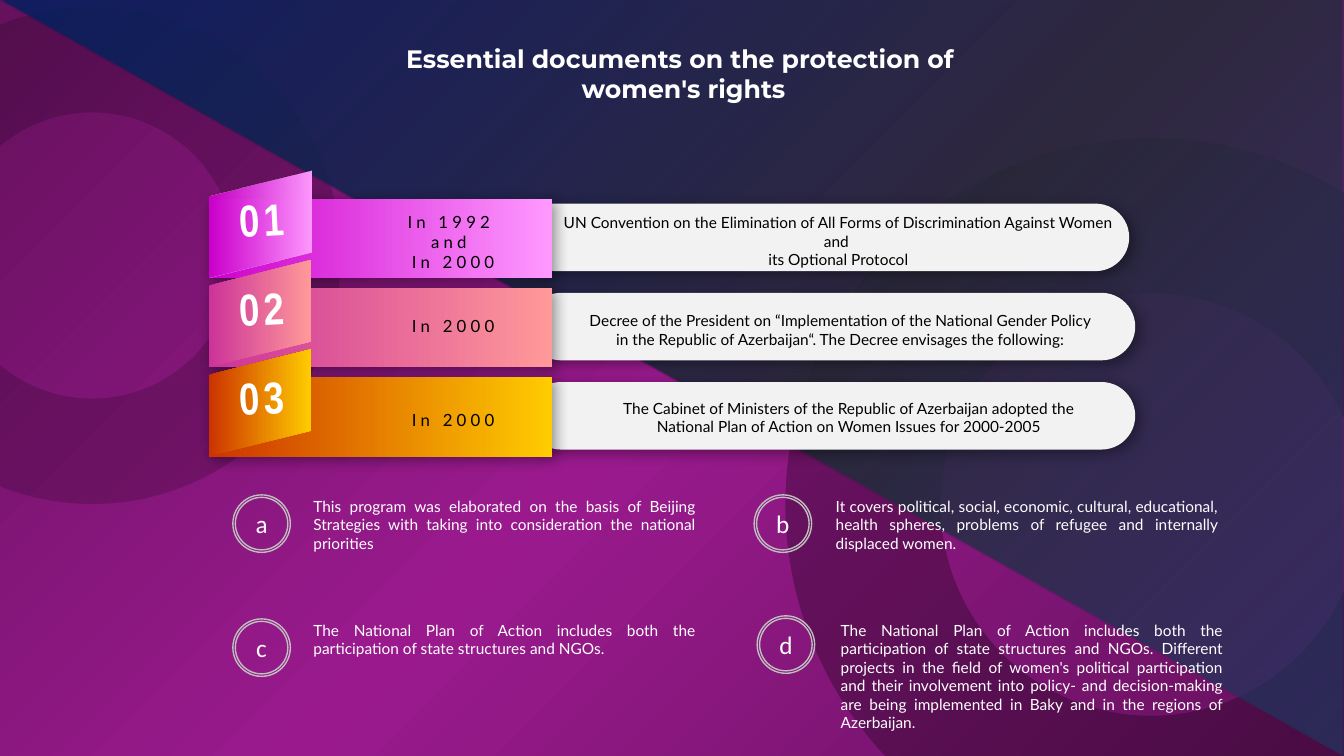
"""Build a slide on the essential documents protecting women's rights."""
from lxml.etree import SubElement
from pptx import Presentation
from pptx.dml.color import RGBColor
from pptx.enum.shapes import MSO_SHAPE
from pptx.enum.text import MSO_ANCHOR, MSO_AUTO_SIZE, PP_ALIGN
from pptx.oxml.ns import qn
from pptx.util import Inches, Pt

COLORS = {
    "white": "FFFFFF", "black": "000000", "pill": "F2F2F2", "ring": "BFBFBF",
    "plum": "65115D", "purple": "9A1A8E",
    "navy": "002060", "slate": "222A35", "blue": "203864",
    "magenta": "CC00CC", "pink": "FF99FF",
    "rose": "CC3399", "salmon": "FF9999",
    "rust": "CC3300", "gold": "FFCC00",
}
TITLE = ["Essential documents on the protection of ", "women's rights"]
ROWS = [
    {"number": "01", "colors": ("magenta", "pink"), "alpha": 93, "pill_x": 5.17,
     "date": ["In 1992 ", "and ", "In 2000"], "date_box": (3.38, 2.05, 2.23, 0.71),
     "text": ["UN Convention on the Elimination of All Forms of Discrimination Against Women ",
              "and ", "its Optional Protocol"],
     "text_box": (5.48, 2.07, 5.67, 0.66)},
    {"number": "02", "colors": ("rose", "salmon"), "alpha": 100, "pill_x": 5.23,
     "date": ["In 2000"], "date_box": (3.59, 3.08, 1.81, 0.3),
     "text": ["Decree of the President on “Implementation of the National Gender Policy "
              "in the Republic of Azerbaijan“. The Decree envisages the following:"],
     "text_box": (5.72, 3.04, 5.23, 0.47)},
    {"number": "03", "colors": ("rust", "gold"), "alpha": 100, "pill_x": 5.23,
     "date": ["In 2000"], "date_box": (3.59, 4.02, 1.81, 0.3),
     "text": ["The Cabinet of Ministers of the Republic of Azerbaijan adopted the "
              "National Plan of Action on Women Issues for 2000-2005"],
     "text_box": (5.96, 3.91, 4.92, 0.47)},
]
ROW_PITCH = 0.885
POINTS = [
    ("a", (2.31, 4.91), (3.01, 4.88, 3.99, 0.66),
     "This program was elaborated on the basis of Beijing Strategies with taking into "
     "consideration the national priorities"),
    ("b", (7.48, 4.91), (8.19, 4.88, 3.99, 0.66),
     "It covers political, social, economic, cultural, educational, health spheres, "
     "problems of refugee and internally displaced women. "),
    ("c", (2.31, 6.14), (3.01, 6.11, 3.99, 0.47),
     "The National Plan of Action includes both the participation of state structures and NGOs."),
    ("d", (7.51, 6.11), (8.24, 6.11, 3.99, 1.21),
     "The National Plan of Action includes both the participation of state structures and "
     "NGOs. Different projects in the field of women's political participation and their "
     "involvement into policy- and decision-making are being implemented in Baky and in the "
     "regions of Azerbaijan."),
]


def rgb(name):
    return RGBColor.from_string(COLORS[name])


def add_color(parent, name, alpha=100):
    clr = SubElement(parent, qn("a:srgbClr"), val=COLORS[name])
    if alpha < 100:
        SubElement(clr, qn("a:alpha"), val=str(alpha * 1000))


def set_gradient(fill, element, stops, angle):
    fill.gradient()
    grad = next(element.iter(qn("a:gradFill")))
    for child in list(grad):
        grad.remove(child)
    gs_list = SubElement(grad, qn("a:gsLst"))
    for pos, name, alpha in stops:
        add_color(SubElement(gs_list, qn("a:gs"), pos=str(pos * 1000)), name, alpha)
    SubElement(grad, qn("a:lin"), ang=str(angle * 60000), scaled="0")


def add_shape(kind, box, color=None, alpha=100, adj=None, flip=""):
    sp = slide.shapes.add_shape(kind, *map(Inches, box))
    sp.shadow.inherit = False
    sp.line.fill.background()
    if color:
        sp.fill.solid()
        sp.fill.fore_color.rgb = rgb(color)
        if alpha < 100:
            clr = next(sp.fill._xPr.iter(qn("a:srgbClr")))
            SubElement(clr, qn("a:alpha"), val=str(alpha * 1000))
    else:
        sp.fill.background()
    if adj is not None:
        sp.adjustments[0] = adj
    for axis in flip:
        sp._element.spPr.find(qn("a:xfrm")).set(f"flip{axis}", "1")
    return sp


def add_shadow(sp):
    effects = sp._element.spPr.find(qn("a:effectLst"))
    shadow = SubElement(effects, qn("a:outerShdw"), blurRad=str(Pt(10)), dist=str(Pt(3)),
                        dir=str(45 * 60000), algn="tl", rotWithShape="0")
    add_color(shadow, "black", 40)


def write(sp, lines, size, font, color, align, bold=False, spacing=0):
    tf = sp.text_frame
    tf.word_wrap = True
    for i, line in enumerate(lines):
        p = tf.add_paragraph() if i else tf.paragraphs[0]
        r = p.add_run()
        r.text = line
        if spacing:
            r._r.get_or_add_rPr().set("spc", str(spacing * 100))
        p.alignment = align
        p.font.size, p.font.name, p.font.bold = Pt(size), font, bold
        p.font.color.rgb = rgb(color)


def add_text(box, *args, **kwargs):
    sp = slide.shapes.add_textbox(*map(Inches, box))
    write(sp, *args, **kwargs)
    sp.text_frame.auto_size = MSO_AUTO_SIZE.SHAPE_TO_FIT_TEXT
    return sp


def add_backdrop():
    bg = slide.background.fill
    set_gradient(bg, slide._element,
                 [(0, "plum", 100), (50, "purple", 100), (100, "plum", 100)], 225)
    add_shape(MSO_SHAPE.DONUT, (7.79, 1.37, 7.26, 7.27), "black", 27, 0.212)
    add_shape(MSO_SHAPE.DONUT, (-1.55, 0.07, 4.93, 4.93), "black", 17, 0.212)
    corner = add_shape(MSO_SHAPE.RIGHT_TRIANGLE, (0, 0, 13.33, 7.5), flip="HV")
    set_gradient(corner.fill, corner._element,
                 [(0, "navy", 83), (57, "slate", 89), (100, "blue", 66)], 225)


def add_title():
    title = slide.shapes.title
    title.left, title.top, title.width, title.height = map(Inches, (2.8, 0.38, 7.96, 0.71))
    write(title, TITLE, 18, "Montserrat", "white", PP_ALIGN.CENTER, bold=True)
    title.text_frame.vertical_anchor = MSO_ANCHOR.TOP
    title.text_frame.auto_size = MSO_AUTO_SIZE.SHAPE_TO_FIT_TEXT
    slide.shapes._spTree.append(title._element)


def add_row(index, row):
    dy = index * ROW_PITCH
    start, end = row["colors"]
    pill = add_shape(MSO_SHAPE.ROUNDED_RECTANGLE, (row["pill_x"], 2.02 + dy, 6.03, 0.67),
                     "pill", adj=0.5)
    band = add_shape(MSO_SHAPE.RECTANGLE, (2.07, 1.97 + dy, 3.41, 0.79))
    set_gradient(band.fill, band._element, [(0, start, 100), (100, end, 100)], 0)
    add_shadow(pill)
    add_shadow(band)
    fold = add_shape(MSO_SHAPE.PARALLELOGRAM, (2.05, 1.72 + dy, 1.06, 1.01), flip="V")
    fold.rotation = 270
    set_gradient(fold.fill, fold._element, [(0, start, row["alpha"]), (100, end, 100)], 270)
    add_text(row["date_box"], row["date"], 12, "Lato", "black", PP_ALIGN.CENTER, spacing=3)
    add_text(row["text_box"], row["text"], 11, "Lato", "black", PP_ALIGN.CENTER)
    number = add_text((2.27, 1.81 + dy, 2.17, 0.64), [row["number"]], 32, "Arial Narrow",
                      "white", PP_ALIGN.LEFT, bold=True, spacing=3)
    number.rotation = -3


def add_point(letter, corner, box, text):
    ring = add_shape(MSO_SHAPE.DONUT, (*corner, 0.57, 0.57), adj=0.043)
    ring.line.color.rgb = rgb("ring")
    ring.line.width = Pt(1)
    write(ring, [letter], 18, "Calibri", "white", PP_ALIGN.CENTER)
    ring.text_frame.vertical_anchor = MSO_ANCHOR.MIDDLE
    add_text(box, [text], 11, "Lato", "white", PP_ALIGN.JUSTIFY)


prs = Presentation()
prs.slide_width, prs.slide_height = Inches(13.33), Inches(7.5)
slide = prs.slides.add_slide(prs.slide_layouts[5])
add_backdrop()
add_title()
for index, row in enumerate(ROWS):
    add_row(index, row)
for point in POINTS:
    add_point(*point)
prs.save("out.pptx")
